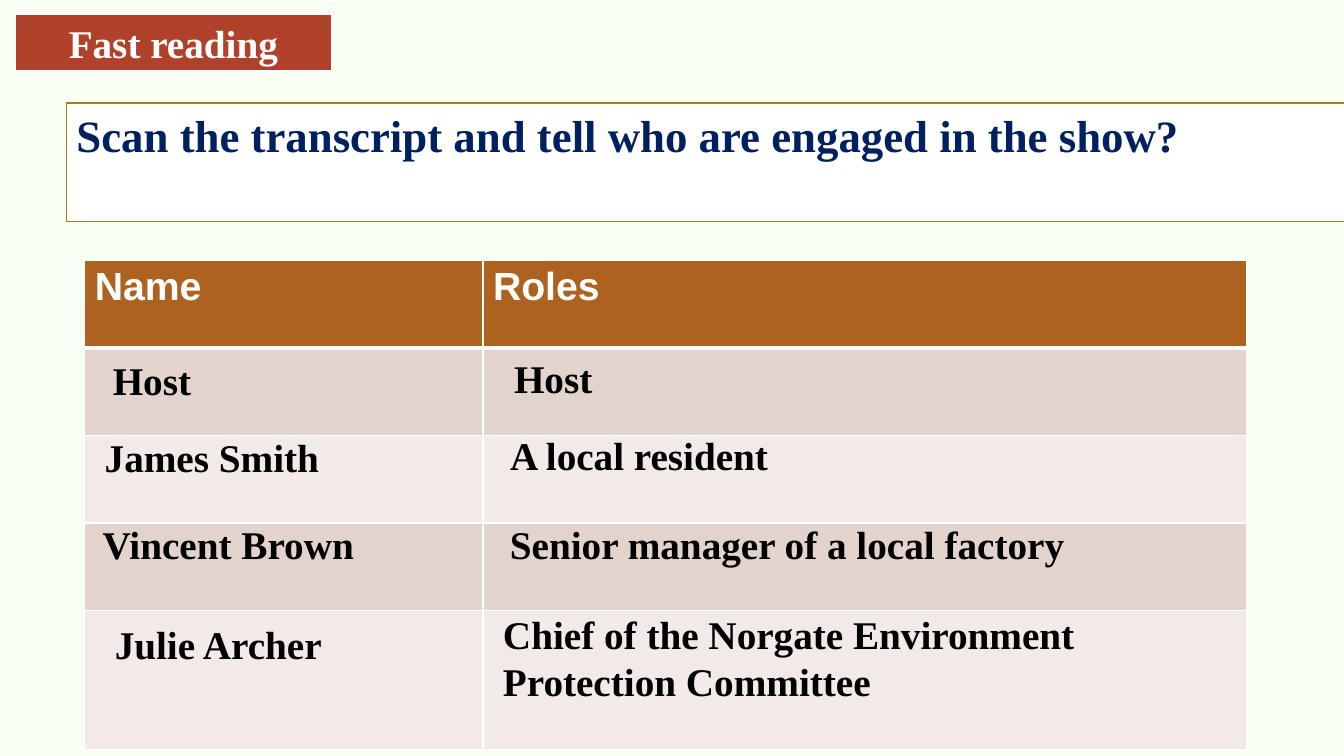
import pptx
import pptx.util
import pptx.dml.color
import pptx.enum.shapes
import pptx.enum.text
import pptx.oxml.ns
import lxml.etree

Inches = pptx.util.Inches
Pt = pptx.util.Pt
RGBColor = pptx.dml.color.RGBColor
ALIGN = pptx.enum.text.PP_ALIGN
RECT = pptx.enum.shapes.MSO_SHAPE.RECTANGLE

MINT = RGBColor(0xF8, 0xFF, 0xF3)
WHITE = RGBColor(0xFF, 0xFF, 0xFF)
BLACK = RGBColor(0, 0, 0)
NAVY = RGBColor(0x00, 0x20, 0x60)
GOLD = RGBColor(0xA2, 0x81, 0x1D)
RED = RGBColor(0xB0, 0x42, 0x2B)
BROWN = RGBColor(0xAD, 0x62, 0x1F)
ROSE = RGBColor(0xE3, 0xD3, 0xCD)
PALE = RGBColor(0xF1, 0xEA, 0xE8)


def write(frame, text, size=28, font="Times New Roman", color=BLACK, align=ALIGN.LEFT):
    frame.word_wrap = True
    frame.vertical_anchor = pptx.enum.text.MSO_ANCHOR.TOP
    para = frame.paragraphs[0]
    para.alignment = align
    run = para.add_run()
    run.text = text
    run.font.size = Pt(size)
    run.font.name = font
    run.font.bold = True
    run.font.color.rgb = color


def border(cell, side, width):
    props = cell._tc.get_or_add_tcPr()
    line = lxml.etree.SubElement(props, pptx.oxml.ns.qn("a:" + side), w=str(Pt(width)))
    fill = lxml.etree.SubElement(line, pptx.oxml.ns.qn("a:solidFill"))
    lxml.etree.SubElement(fill, pptx.oxml.ns.qn("a:srgbClr"), val=str(WHITE))


deck = pptx.Presentation()
deck.slide_width = Inches(13.33)
deck.slide_height = Inches(7.5)
slide = deck.slides.add_slide(deck.slide_layouts[6])
slide.background.fill.solid()
slide.background.fill.fore_color.rgb = MINT

widths = [3.95, 7.57]
heights = [0.87, 0.87, 0.87, 0.87, 1.38]
table = slide.shapes.add_table(
    len(heights), len(widths), Inches(0.84), Inches(2.58),
    Inches(sum(widths)), Inches(sum(heights))).table
for col, width in zip(table.columns, widths):
    col.width = Inches(width)
for index, height in enumerate(heights):
    row = table.rows[index]
    row.height = Inches(height)
    for cell in row.cells:
        border(cell, "lnL", 1)
        border(cell, "lnR", 1)
        border(cell, "lnT", 3 if index == 1 else 1)
        border(cell, "lnB", 3 if index == 0 else 1)
        cell.fill.solid()
        cell.fill.fore_color.rgb = BROWN if index == 0 else ROSE if index % 2 else PALE
for cell, title in zip(table.rows[0].cells, ["Name", "Roles"]):
    write(cell.text_frame, title, font="Arial", color=WHITE)

panels = [
    (0.66, 1.02, 12.94, 1.18, WHITE, GOLD, 1,
     "Scan the transcript and tell who are engaged in the show?",
     dict(size=32, color=NAVY)),
    (0.15, 0.14, 3.14, 0.57, RED, WHITE, 1.5, "Fast reading",
     dict(color=WHITE, align=ALIGN.CENTER)),
]
for left, top, width, height, fill, line, weight, text, style in panels:
    panel = slide.shapes.add_shape(
        RECT, Inches(left), Inches(top), Inches(width), Inches(height))
    panel.shadow.inherit = False
    panel.fill.solid()
    panel.fill.fore_color.rgb = fill
    panel.line.color.rgb = line
    panel.line.width = Pt(weight)
    write(panel.text_frame, text, **style)

labels = [
    (1.02, 3.49, 3.35, 0.57, "Host"),
    (5, 3.47, 6.41, 0.57, "Host"),
    (0.94, 4.25, 3.35, 0.57, "James Smith"),
    (4.96, 4.23, 6.41, 0.57, "A local resident"),
    (0.92, 5.11, 3.83, 0.57, "Vincent Brown"),
    (4.96, 5.11, 7.33, 0.57, "Senior manager of a local factory"),
    (1.04, 6.1, 3.6, 0.57, "Julie Archer"),
    (4.89, 6.01, 7.59, 1.04, "Chief of the Norgate Environment Protection Committee"),
]
for left, top, width, height, text in labels:
    label = slide.shapes.add_textbox(
        Inches(left), Inches(top), Inches(width), Inches(height))
    write(label.text_frame, text)

deck.save("out.pptx")
